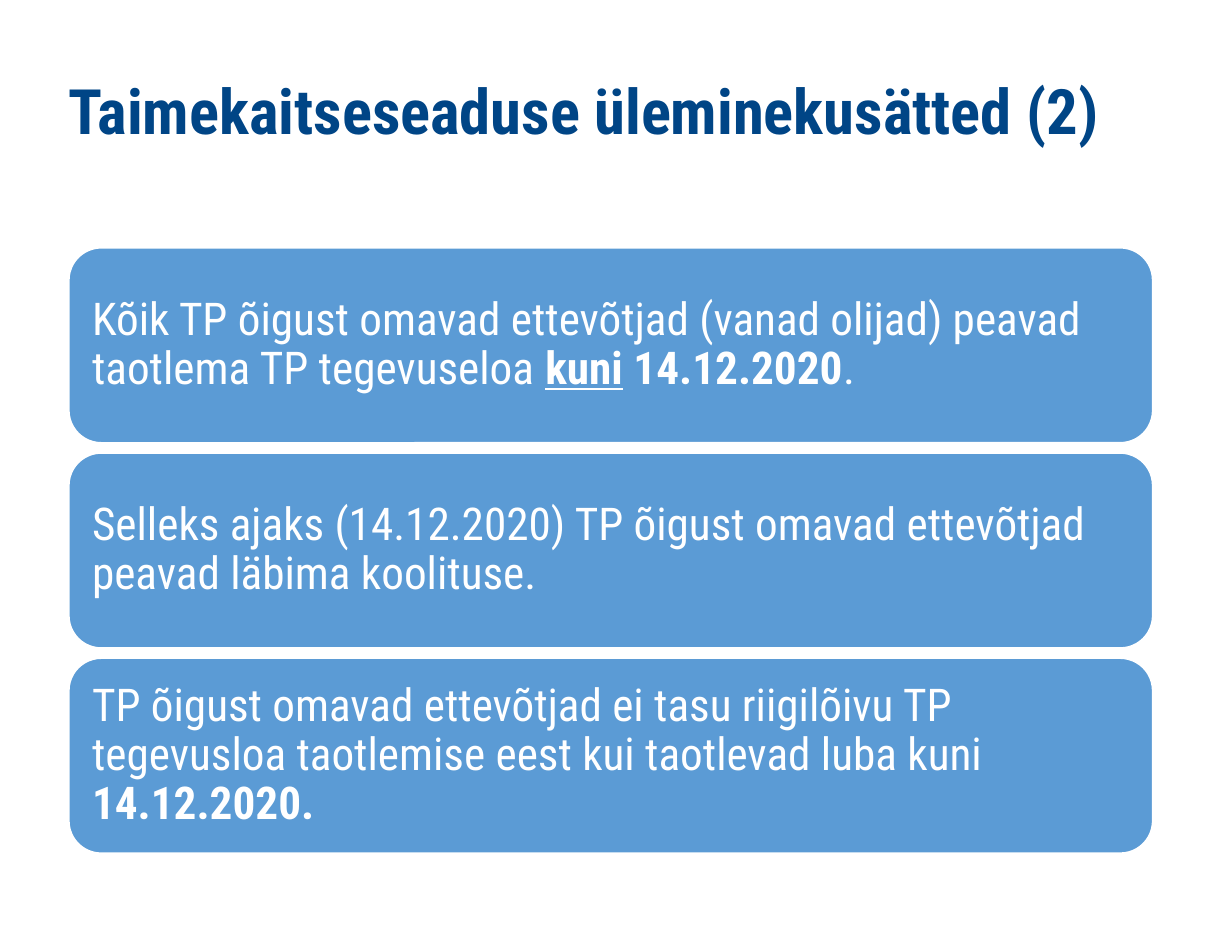
from pptx import Presentation
from pptx.dml.color import RGBColor
from pptx.enum.shapes import MSO_SHAPE
from pptx.enum.text import MSO_ANCHOR, PP_ALIGN
from pptx.util import Inches, Pt

FONT = "Roboto Condensed"
COLORS = {"title": "004586", "card": "5B9BD5", "white": "FFFFFF"}

TITLE = [("Taimekaitseseaduse üleminekusätted (2)", "b")]
# Each run is its text and its style: b for bold, u for underlined
CARDS = [
    [("Kõik TP õigust omavad ettevõtjad (vanad olijad) peavad taotlema TP tegevuseloa ", ""),
     ("kuni", "bu"),
     (" 14.12.2020", "b"),
     (".", "")],
    [("Selleks ajaks (14.12.2020) TP õigust omavad ettevõtjad peavad läbima koolituse.", "")],
    [("TP õigust omavad ettevõtjad ei tasu riigilõivu TP tegevusloa taotlemise eest "
      "kui taotlevad luba kuni ", ""),
     ("14.12.2020.", "b")],
]

CM = 1 / 2.54  # the slide measures 25 by 19 cm
LEFT, WIDTH = 0.55, 8.66
TOP, HEIGHT, GAP = 1.98, 1.56, 0.08


def color(name):
    return RGBColor.from_string(COLORS[name])


def write(shape, runs, size, tint, spacing, insets, anchor):
    """Fill a shape with one left-aligned paragraph; insets run left, top, right, bottom."""
    frame = shape.text_frame
    frame.word_wrap = True
    frame.vertical_anchor = anchor
    (frame.margin_left, frame.margin_top,
     frame.margin_right, frame.margin_bottom) = map(Inches, insets)
    para = frame.paragraphs[0]
    para.alignment = PP_ALIGN.LEFT
    para.line_spacing = spacing
    for text, style in runs:
        run = para.add_run()
        run.text = text
        font = run.font
        font.name, font.size = FONT, Pt(size)
        font.bold, font.underline = "b" in style, "u" in style
        font.color.rgb = color(tint)


def add_card(slide, top, runs):
    card = slide.shapes.add_shape(MSO_SHAPE.ROUNDED_RECTANGLE, Inches(LEFT), Inches(top),
                                  Inches(WIDTH), Inches(HEIGHT))
    card.shadow.inherit = False
    card.fill.solid()
    card.fill.fore_color.rgb = color("card")
    card.line.color.rgb = color("white")
    card.line.width = Pt(1)
    write(card, runs, 26, "white", 0.9, [0.11] * 4, MSO_ANCHOR.MIDDLE)


def main():
    deck = Presentation()
    deck.slide_width = Inches(25 * CM)
    deck.slide_height = Inches(19 * CM)
    slide = deck.slides.add_slide(deck.slide_layouts[6])

    title = slide.shapes.add_textbox(Inches(LEFT), Inches(0.59), Inches(WIDTH), Inches(1.18))
    write(title, TITLE, 36, "title", 0.88, [0, 0.06, 0, 0], MSO_ANCHOR.TOP)

    for row, runs in enumerate(CARDS):
        add_card(slide, TOP + row * (HEIGHT + GAP), runs)

    deck.save("out.pptx")


if __name__ == "__main__":
    main()
